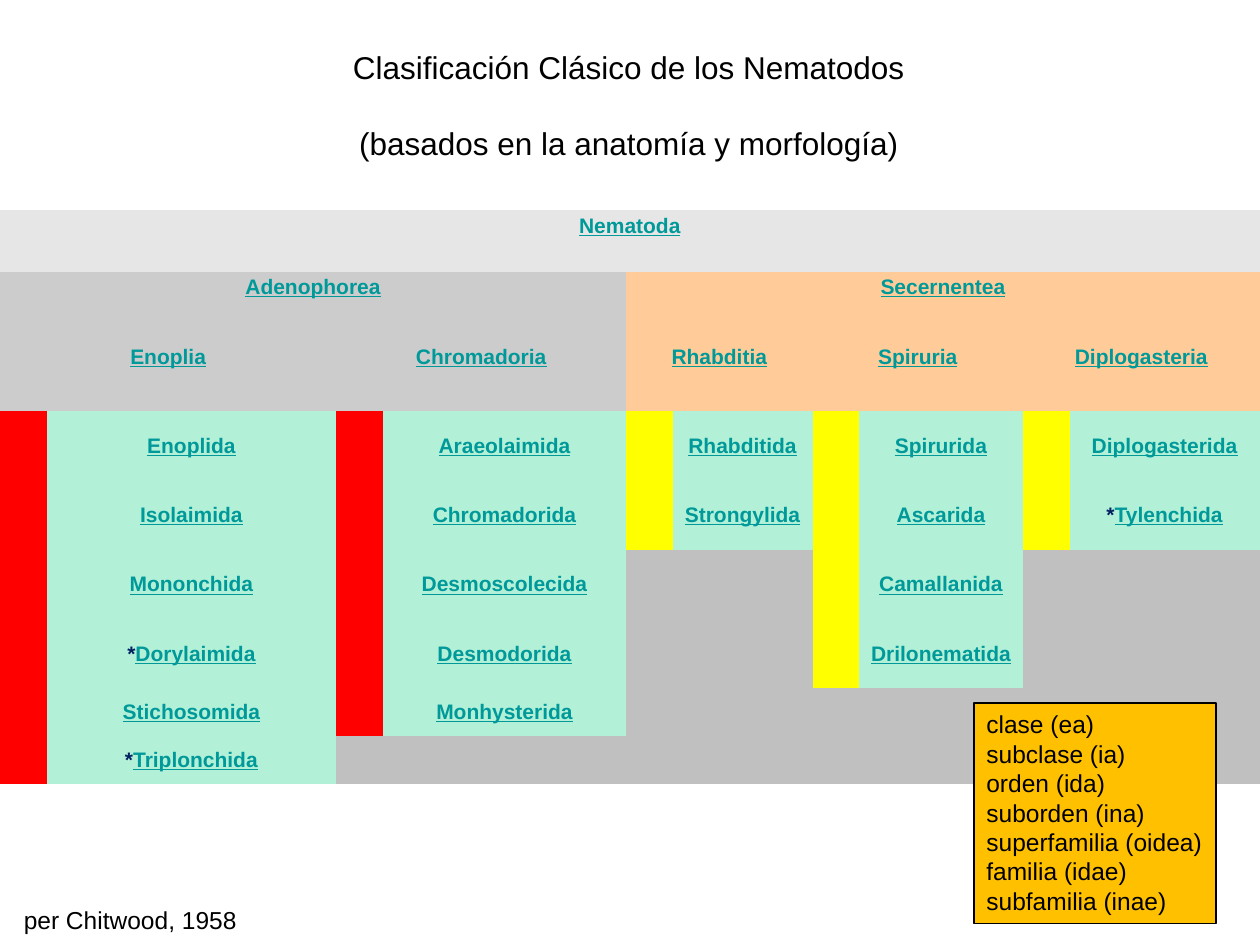
from typing import NamedTuple

from lxml.etree import SubElement
from pptx import Presentation
from pptx.dml.color import RGBColor
from pptx.enum.shapes import MSO_SHAPE
from pptx.enum.text import MSO_ANCHOR, MSO_AUTO_SIZE, PP_ALIGN
from pptx.oxml.ns import qn
from pptx.util import Inches, Pt

BLACK, TEAL, NAVY = "000000", "009999", "002060"
LIGHT, GRAY, PEACH = "E6E6E6", "CCCCCC", "FFCC99"
RED, YELLOW, MINT, SILVER = "FF0000", "FFFF00", "B2F0D8", "C0C0C0"
PLAIN = "{2D5ABB26-0587-4C30-8999-92F81FD0307C}"
BAR = 0.37
ROWS = [0.24] * 4 + [0.38, 0.24] + [0.55] * 4 + [0.38] * 2
TOP = 6


class Group(NamedTuple):
    """A subclass with its colours, column width and orders."""
    name: str
    band: str
    bar: str
    width: float
    orders: list[str]


class Span(NamedTuple):
    """A header that covers several columns."""
    name: str
    row: int
    col: int
    count: int
    fill: str


class Note(NamedTuple):
    """A block of text with its place and style."""
    lines: list[str]
    box: tuple[float, float, float, float]
    size: int
    align: PP_ALIGN = PP_ALIGN.LEFT
    gap: int = 0
    fill: str = ""


GROUPS = [
    Group("Enoplia", GRAY, RED, 2.3,
          ["Enoplida", "Isolaimida", "Mononchida", "*Dorylaimida", "Stichosomida", "*Triplonchida"]),
    Group("Chromadoria", GRAY, RED, 1.93,
          ["Araeolaimida", "Chromadorida", "Desmoscolecida", "Desmodorida", "Monhysterida"]),
    Group("Rhabditia", PEACH, YELLOW, 1.11, ["Rhabditida", "Strongylida"]),
    Group("Spiruria", PEACH, YELLOW, 1.3,
          ["Spirurida", "Ascarida", "Camallanida", "Drilonematida"]),
    Group("Diplogasteria", PEACH, YELLOW, 1.51, ["Diplogasterida", "*Tylenchida"]),
]

SPANS = [
    Span("Nematoda", 0, 0, 10, LIGHT),
    Span("Adenophorea", 2, 0, 4, GRAY),
    Span("Secernentea", 2, 4, 6, PEACH),
    *(Span(g.name, 4, 2 * i, 2, g.band) for i, g in enumerate(GROUPS)),
]

NOTES = [
    Note(["Clasificación Clásico de los Nematodos", "(basados en la anatomía y morfología)"],
         (2.68, 0.33, 4.62, 1.01), 18, PP_ALIGN.CENTER, 22),
    Note(["clase (ea)", "subclase (ia)", "orden (ida)", "suborden (ina)",
          "superfamilia (oidea)", "familia (idae)", "subfamilia (inae)"],
         (7.73, 5.58, 1.92, 1.75), 14, fill="FFC000"),
    Note(["per Chitwood, 1958"], (0.09, 7.13, 1.92, 0.34), 14),
]


def color(code: str) -> RGBColor:
    """Turn a hex string into a colour."""
    return RGBColor.from_string(code)


def style(run, size: int, hue: str, link: bool = False) -> None:
    """Set the font of a run."""
    font = run.font
    font.name, font.size = "Arial", Pt(size)
    font.color.rgb = color(hue)
    if link:
        font.underline = True


def paint(cell, fill: str, name: str = "") -> None:
    """Fill a cell and write its name, with any star in navy."""
    cell.fill.solid()
    cell.fill.fore_color.rgb = color(fill)
    cell.vertical_anchor = MSO_ANCHOR.MIDDLE
    cell.margin_left = cell.margin_right = Inches(0.05)
    cell.margin_top = cell.margin_bottom = Inches(0.03)
    para = cell.text_frame.paragraphs[0]
    para.alignment = PP_ALIGN.CENTER
    if not name:
        SubElement(para._p, qn("a:endParaRPr"), sz="1000")
        return
    if name.startswith("*"):
        para.text = "*"
        style(para.runs[0], 12, NAVY)
        para.add_run().text = name[1:]
    else:
        para.text = name
    style(para.runs[-1], 12, TEAL, True)
    for run in para.runs:
        run.font.bold = True


def draw_table(slide) -> None:
    """Draw the classification table."""
    cols = [w for g in GROUPS for w in (BAR, g.width)]
    frame = slide.shapes.add_table(len(ROWS), len(cols), Inches(0), Inches(1.67),
                                   Inches(10), Inches(sum(ROWS)))
    table = frame.table
    table.first_row = table.horz_banding = False
    table._tbl.tblPr.find(qn("a:tableStyleId")).text = PLAIN
    for col, width in zip(table.columns, cols):
        col.width = Inches(width)
    for row, height in zip(table.rows, ROWS):
        row.height = Inches(height)
    for span in SPANS:
        last = span.col + span.count - 1
        for row, name in ((span.row, span.name), (span.row + 1, "")):
            for col in range(span.col, last + 1):
                paint(table.cell(row, col), span.fill, name if col == span.col else "")
            table.cell(row, span.col).merge(table.cell(row, last))
    for i, group in enumerate(GROUPS):
        for j in range(len(ROWS) - TOP):
            used = j < len(group.orders)
            paint(table.cell(TOP + j, 2 * i), group.bar if used else SILVER)
            paint(table.cell(TOP + j, 2 * i + 1), MINT if used else SILVER,
                  group.orders[j] if used else "")


def draw_note(slide, note: Note) -> None:
    """Draw a text block, in a framed box if it has a fill."""
    box = [Inches(v) for v in note.box]
    if note.fill:
        shape = slide.shapes.add_shape(MSO_SHAPE.RECTANGLE, *box)
        shape.shadow.inherit = False
        shape.fill.solid()
        shape.fill.fore_color.rgb = color(note.fill)
        shape.line.color.rgb = color(BLACK)
        shape.line.width = Pt(1)
    else:
        shape = slide.shapes.add_textbox(*box)
    frame = shape.text_frame
    frame.text = "\n".join(note.lines)
    frame.word_wrap = False
    frame.auto_size = MSO_AUTO_SIZE.SHAPE_TO_FIT_TEXT
    frame.vertical_anchor = MSO_ANCHOR.TOP
    for i, para in enumerate(frame.paragraphs):
        para.alignment = note.align
        if i and note.gap:
            para.space_before = Pt(note.gap)
        style(para.runs[0], note.size, BLACK)


def main() -> None:
    """Build the slide and save it."""
    deck = Presentation()
    deck.slide_width, deck.slide_height = Inches(10), Inches(7.5)
    slide = deck.slides.add_slide(deck.slide_layouts[6])
    draw_table(slide)
    for note in NOTES:
        draw_note(slide, note)
    deck.save("out.pptx")


if __name__ == "__main__":
    main()
